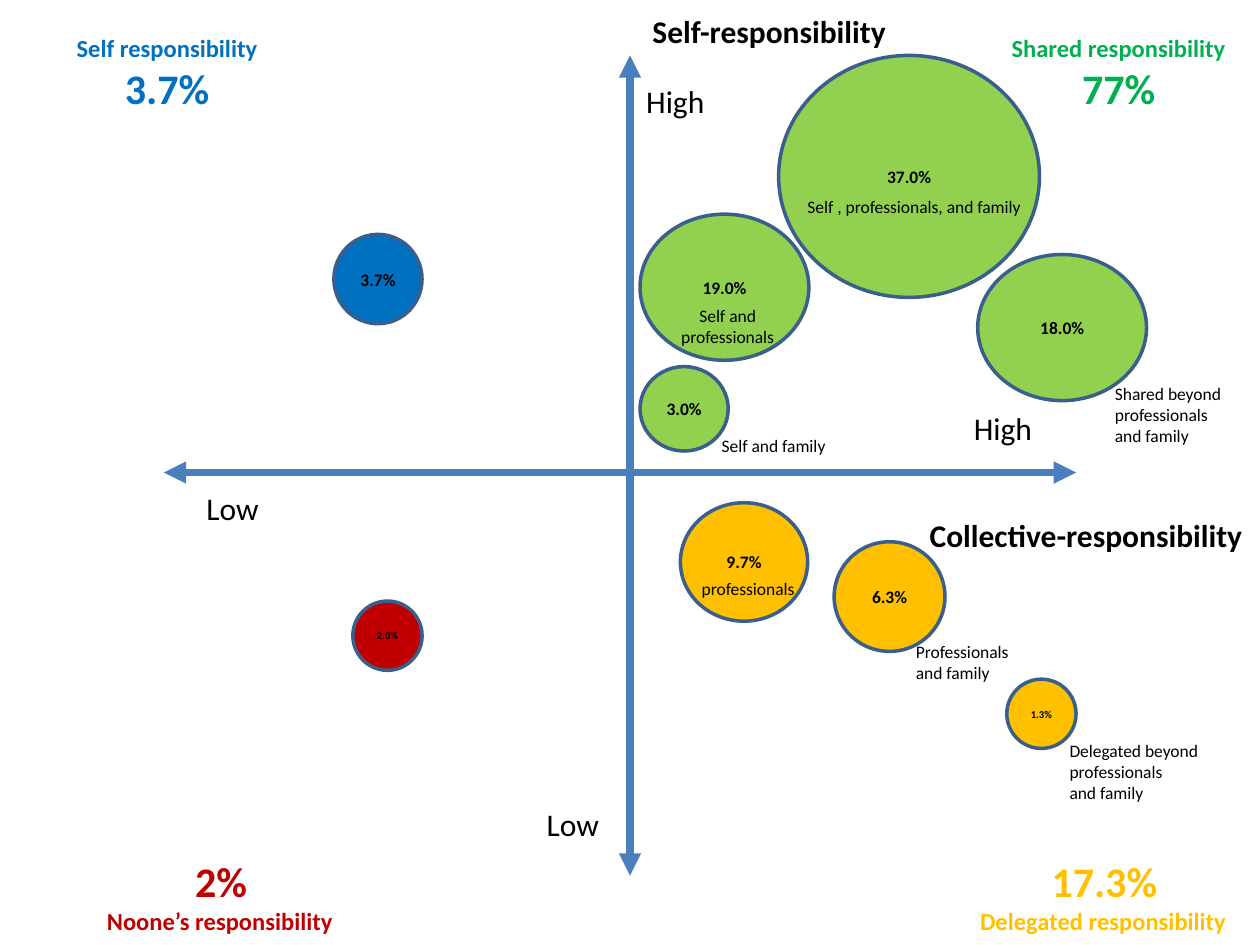
from dataclasses import dataclass
from lxml.etree import SubElement as Sub
from pptx import Presentation
from pptx.dml.color import RGBColor as RGB
from pptx.enum.shapes import MSO_CONNECTOR as Link, MSO_SHAPE as Form
from pptx.enum.text import MSO_ANCHOR as Anchor, MSO_AUTO_SIZE as Fit, PP_ALIGN as Align
from pptx.oxml.ns import qn
from pptx.shapes.shapetree import SlideShapes as Shapes
from pptx.text.text import _Paragraph as Para
from pptx.util import Inches, Pt


@dataclass(frozen=True)
class Theme:
    font: str = "Calibri"
    ink: str = "000000"
    axis: str = "4B7EBC"
    edge: str = "3A5F8C"
    blue: str = "0070C0"
    red: str = "C00000"
    lime: str = "92D050"
    green: str = "00B050"
    gold: str = "FFC000"
    total: int = 24
    head: int = 18
    group: int = 14
    label: int = 10
    tiny: int = 6
    axis_width: float = 4.25
    edge_width: float = 2


T = Theme()
Box = tuple[float, float, float, float]


@dataclass(frozen=True)
class Axis:
    start: tuple[float, float]
    end: tuple[float, float]


@dataclass(frozen=True)
class Bubble:
    text: str
    box: Box
    fill: str
    size: int = T.label


@dataclass(frozen=True)
class Line:
    text: str
    size: int = T.label
    align: Align = Align.LEFT


@dataclass(frozen=True)
class Label:
    box: Box
    lines: tuple[Line, ...]
    color: str = T.ink
    bold: bool = False
    wrap: bool = False


def head(text: str, box: Box, bold: bool = False) -> Label:
    return Label(box, (Line(text, T.head),), bold=bold)


def group(name: str, total: str, box: Box, color: str, top: bool) -> Label:
    lines = (Line(name, T.group), Line(total, T.total, Align.CENTER))
    return Label(box, lines if top else lines[::-1], color, True)


def note(box: Box, *texts: str, wrap: bool = False, align: Align = Align.LEFT) -> Label:
    return Label(box, tuple(Line(t, align=align) for t in texts), wrap=wrap)


AXES = [Axis((5, 6.95), (5, 0.44)), Axis((1.3, 3.75), (8.54, 3.75))]

BUBBLES = [
    Bubble("3.7%", (2.65, 1.86, 0.7, 0.71), T.blue),
    Bubble("2.0%", (2.8, 4.77, 0.55, 0.55), T.red, T.tiny),
    Bubble("3.0%", (5.08, 2.91, 0.7, 0.67), T.lime),
    Bubble("19.0%", (5.08, 1.7, 1.34, 1.16), T.lime),
    Bubble("37.0%", (6.18, 0.44, 2.07, 1.92), T.lime),
    Bubble("18.0%", (7.76, 2.02, 1.34, 1.16), T.lime),
    Bubble("9.7%", (5.4, 3.99, 1.01, 0.94), T.gold),
    Bubble("6.3%", (6.62, 4.3, 0.88, 0.87), T.gold),
    Bubble("1.3%", (7.99, 5.39, 0.55, 0.55), T.gold, T.tiny),
]

LABELS = [
    head("Self-responsibility", (5.08, 0.05, 2.07, 0.4), True),
    head("Collective-responsibility", (7.28, 4.05, 2.7, 0.4), True),
    head("High", (5.03, 0.6, 0.68, 0.4)),
    head("High", (7.63, 3.2, 0.68, 0.4)),
    head("Low", (4.24, 6.34, 0.62, 0.4)),
    head("Low", (1.54, 3.83, 0.62, 0.4)),
    group("Self responsibility", "3.7%", (0.51, 0.21, 1.65, 0.74), T.blue, True),
    group("Shared responsibility", "77%", (7.93, 0.21, 1.91, 0.74), T.green, True),
    group("Noone’s responsibility", "2%", (0.75, 6.74, 2.01, 0.74), T.red, False),
    group("Delegated responsibility", "17.3%", (7.68, 6.74, 2.17, 0.74), T.gold, False),
    note((5.63, 3.4, 1.03, 0.27), "Self and family"),
    note((5.29, 2.37, 0.97, 0.44), "Self and professionals", wrap=True, align=Align.CENTER),
    note((6.31, 1.51, 1.92, 0.27), "Self , professionals, and family"),
    note((8.75, 2.99, 1.05, 0.61), "Shared beyond professionals and family", wrap=True),
    note((5.47, 4.54, 0.95, 0.27), "professionals"),
    note((7.17, 5.04, 0.98, 0.44), "Professionals", "and family"),
    note((8.39, 5.82, 1.27, 0.61), "Delegated beyond", "professionals", "and family"),
]


def write(para: Para, line: Line, color: str, bold: bool) -> None:
    para.alignment = line.align
    run = para.add_run()
    run.text = line.text
    font = run.font
    font.name, font.size, font.bold = T.font, Pt(line.size), bold
    font.color.rgb = RGB.from_string(color)


def draw_axis(shapes: Shapes, axis: Axis) -> None:
    ends = [Inches(n) for n in axis.start + axis.end]
    link = shapes.add_connector(Link.STRAIGHT, *ends)
    link.line.color.rgb = RGB.from_string(T.axis)
    link.line.width = Pt(T.axis_width)
    stroke = link.line._get_or_add_ln()
    for tag in ("a:headEnd", "a:tailEnd"):
        Sub(stroke, qn(tag), type="triangle")
    Sub(link._element.spPr, qn("a:effectLst"))


def draw_bubble(shapes: Shapes, item: Bubble) -> None:
    shape = shapes.add_shape(Form.OVAL, *(Inches(n) for n in item.box))
    shape.shadow.inherit = False
    shape.fill.solid()
    shape.fill.fore_color.rgb = RGB.from_string(item.fill)
    shape.line.color.rgb = RGB.from_string(T.edge)
    shape.line.width = Pt(T.edge_width)
    frame = shape.text_frame
    frame.vertical_anchor = Anchor.MIDDLE
    write(frame.paragraphs[0], Line(item.text, item.size, Align.CENTER), T.ink, True)


def draw_label(shapes: Shapes, item: Label) -> None:
    frame = shapes.add_textbox(*(Inches(n) for n in item.box)).text_frame
    frame.word_wrap = item.wrap
    frame.auto_size = Fit.SHAPE_TO_FIT_TEXT
    for i, line in enumerate(item.lines):
        para = frame.add_paragraph() if i else frame.paragraphs[0]
        write(para, line, item.color, item.bold)


def main() -> None:
    deck = Presentation()
    deck.slide_width, deck.slide_height = Inches(10), Inches(7.5)
    shapes = deck.slides.add_slide(deck.slide_layouts[6]).shapes
    for axis in AXES:
        draw_axis(shapes, axis)
    for bubble in BUBBLES:
        draw_bubble(shapes, bubble)
    for label in LABELS:
        draw_label(shapes, label)
    deck.save("out.pptx")


if __name__ == "__main__":
    main()
